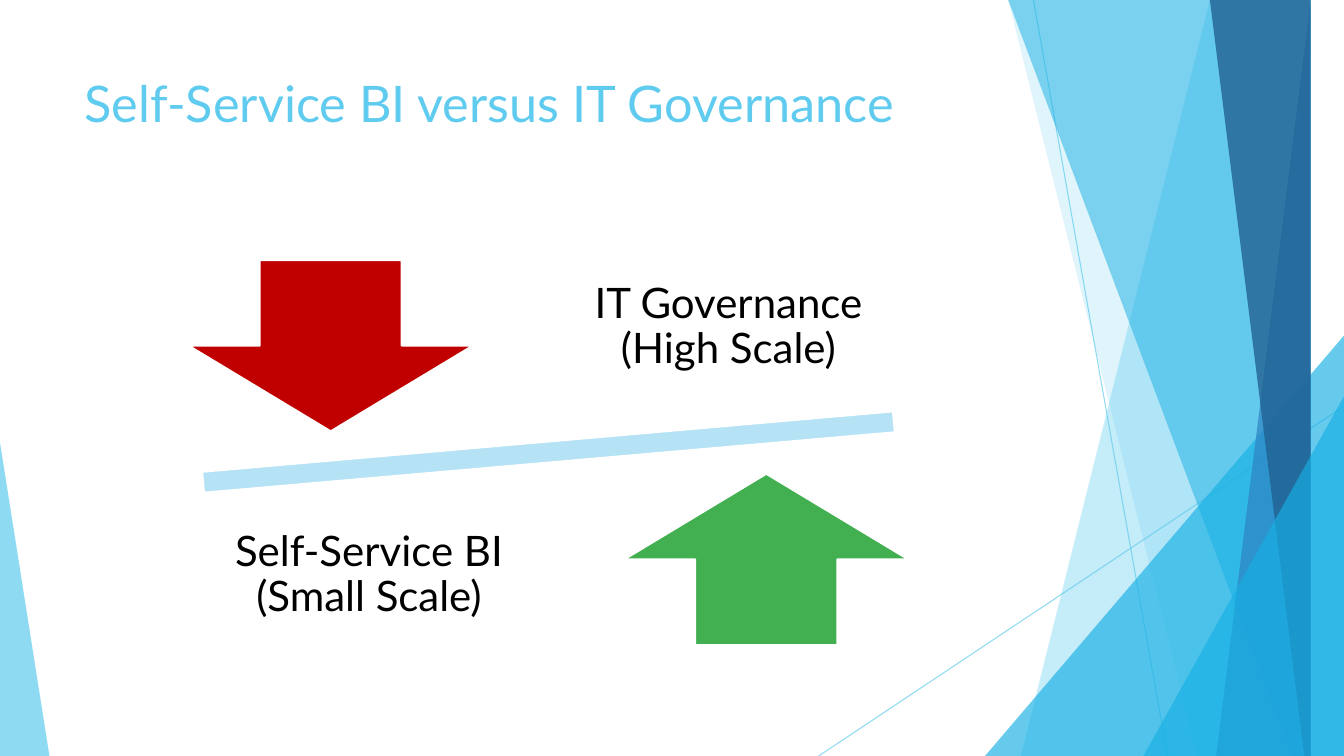
"""Build the slide weighing self-service BI against IT governance."""
import pptx
import pptx.util
import pptx.dml.color
import pptx.enum.shapes
import pptx.enum.text
import pptx.oxml.ns
import lxml.etree

W, H = 13.33, 7.5
FONT = "Lato"
COLORS = {"sky": "5FCBEF", "cyan": "17B0E4", "blue": "2E83C3", "navy": "226292",
          "bar": "B6E2F6", "red": "C00000", "green": "42B051",
          "white": "FFFFFF", "black": "000000"}

RAYS = [((10.25, 0), (11.58, H)), ((W, 4.03), (8.12, H))]
BACK_BANDS = [(12.28, 10.04, "sky", 36), (10.5, 11.83, "sky", 20)]
FRONT_BANDS = [(10.21, 12.91, "cyan", 50), (13.03, 11.92, "blue", 70),
               (11.96, 13.18, "navy", 80)]
BACK_WEDGE = (W - 3.56, 3.56, 4.17, 1, "cyan", 66)
FRONT_WEDGES = [(W - 1.99, 1.99, 3.57, 1, "cyan", 66), (0, 0.49, 3.11, 0, "sky", 70)]

TITLE = ("Self-Service BI versus IT Governance", (0.74, 0.67, 9.4, 1.44))
SCALE = [("MATH_MINUS", (0.76, 4.04, 9.36, 0.89), "bar", -5),
         ("DOWN_ARROW", (1.87, 2.58, 2.82, 1.7), "red", 0),
         ("UP_ARROW", (6.19, 4.7, 2.82, 1.7), "green", 0)]
LABELS = [("IT Governance\v(High Scale)", (5.57, 2.36, 3.31, 1.78)),
          ("Self-Service BI\v(Small Scale)", (1.99, 4.82, 3.34, 1.78))]
TITLE_STYLE = {"size": 36, "color": "sky", "inset": (0.1, 0.05), "frame": {
    "vertical_anchor": pptx.enum.text.MSO_ANCHOR.TOP}, "para": {}}
LABEL_STYLE = {"size": 30, "color": "black", "inset": (0.23, 0.23), "frame": {
    "vertical_anchor": pptx.enum.text.MSO_ANCHOR.MIDDLE}, "para": {
    "alignment": pptx.enum.text.PP_ALIGN.CENTER, "line_spacing": 0.9}}

SHAPES = pptx.enum.shapes.MSO_SHAPE
qn = pptx.oxml.ns.qn


def rgb(name):
    return pptx.dml.color.RGBColor.from_string(COLORS[name])


def inches(values):
    return [pptx.util.Inches(v) for v in values]


def set_alpha(sp, percent):
    for clr in sp.element.spPr.iter(qn("a:srgbClr")):
        lxml.etree.SubElement(clr, qn("a:alpha")).set("val", str(percent * 1000))


def paint(sp, color, alpha=100, outline=None):
    sp.shadow.inherit = False
    sp.fill.solid()
    sp.fill.fore_color.rgb = rgb(color)
    if alpha < 100:
        set_alpha(sp, alpha)
    if outline:
        sp.line.color.rgb = rgb(outline)
        sp.line.width = pptx.util.Pt(1.5)
    else:
        sp.line.fill.background()


def add_ray(s, start, end):
    kind = pptx.enum.shapes.MSO_CONNECTOR.STRAIGHT
    sp = s.shapes.add_connector(kind, *inches(start + end))
    sp.line.color.rgb = rgb("sky")
    sp.line.width = pptx.util.Pt(0.75)
    set_alpha(sp, 70)
    lxml.etree.SubElement(sp.element.spPr, qn("a:effectLst"))


def add_band(s, top_x, bottom_x, color, alpha):
    fb = s.shapes.build_freeform(top_x, 0, scale=pptx.util.Inches(1))
    fb.add_line_segments([(W, 0), (W, H), (bottom_x, H)], close=True)
    paint(fb.convert_to_shape(), color, alpha)


def add_wedge(s, left, width, height, apex, color, alpha):
    box = inches((left, H - height, width, height))
    sp = s.shapes.add_shape(SHAPES.ISOSCELES_TRIANGLE, *box)
    sp.adjustments[0] = apex
    paint(sp, color, alpha)


def add_text(s, text, box, style):
    tf = s.shapes.add_textbox(*inches(box)).text_frame
    dx, dy = inches(style["inset"])
    frame = {"word_wrap": True, "margin_left": dx, "margin_right": dx,
             "margin_top": dy, "margin_bottom": dy, **style["frame"]}
    for key, value in frame.items():
        setattr(tf, key, value)
    p = tf.paragraphs[0]
    p.text = text
    for key, value in style["para"].items():
        setattr(p, key, value)
    for r in p.runs:
        for key, value in {"name": FONT, "size": pptx.util.Pt(style["size"])}.items():
            setattr(r.font, key, value)
        r.font.color.rgb = rgb(style["color"])


def main():
    prs = pptx.Presentation()
    prs.slide_width, prs.slide_height = inches((W, H))
    s = prs.slides.add_slide(prs.slide_layouts[6])
    for ray in RAYS:
        add_ray(s, *ray)
    for band in BACK_BANDS:
        add_band(s, *band)
    add_wedge(s, *BACK_WEDGE)
    for band in FRONT_BANDS:
        add_band(s, *band)
    for wedge in FRONT_WEDGES:
        add_wedge(s, *wedge)
    add_text(s, *TITLE, TITLE_STYLE)
    for kind, box, color, angle in SCALE:
        sp = s.shapes.add_shape(getattr(SHAPES, kind), *inches(box))
        sp.rotation = angle
        paint(sp, color, outline="white")
    for label in LABELS:
        add_text(s, *label, LABEL_STYLE)
    prs.save("out.pptx")


if __name__ == "__main__":
    main()
